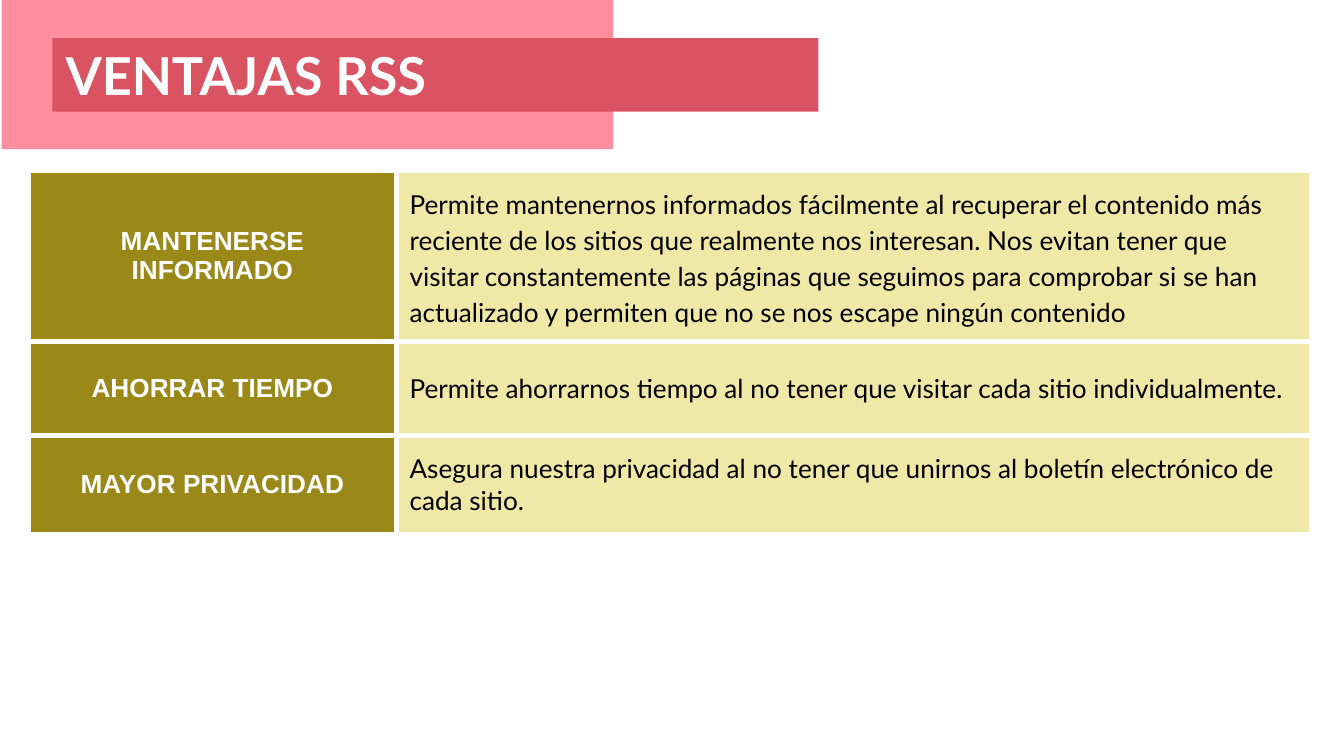
from lxml import etree
from pptx import Presentation
from pptx import util as u
from pptx.dml import color
from pptx.enum import shapes, text
from pptx.oxml import ns

WHITE = "FFFFFF"
MARGIN = u.Cm(0.25)


def write(tf, content, size=14, font="Lato", hue="000000", bold=False,
          align=text.PP_ALIGN.LEFT):
    tf.word_wrap = True
    p = tf.paragraphs[0]
    p.alignment = align
    r = p.add_run()
    r.text = content
    r.font.size = u.Pt(size)
    r.font.name = font
    r.font.bold = bold
    r.font.color.rgb = color.RGBColor.from_string(hue)
    return p


def paint(target, hue):
    target.fill.solid()
    target.fill.fore_color.rgb = color.RGBColor.from_string(hue)


prs = Presentation()
prs.slide_width, prs.slide_height = u.Cm(25.4), u.Cm(14.29)
s = prs.slides.add_slide(prs.slide_layouts[6])

# Title banner: the last band drawn carries the title
for box, hue in [((0.03, 0, 11.56, 2.82), "FF8E9E"),
                 ((0.99, 0.72, 14.48, 1.39), "D95362")]:
    sp = s.shapes.add_shape(shapes.MSO_SHAPE.RECTANGLE, *map(u.Cm, box))
    paint(sp, hue)
    sp.line.fill.background()
    sp.shadow.inherit = False

tf = sp.text_frame
tf.vertical_anchor = text.MSO_ANCHOR.MIDDLE
tf.margin_left = tf.margin_right = tf.margin_top = tf.margin_bottom = MARGIN
write(tf, "VENTAJAS RSS", size=28, hue=WHITE, bold=True)

# Table of advantages: name, explanation, row height in cm
advantages = [
    ("MANTENERSE INFORMADO",
     "Permite mantenernos informados fácilmente al recuperar el contenido más "
     "reciente de los sitios que realmente nos interesan. Nos evitan tener que "
     "visitar constantemente las páginas que seguimos para comprobar si se han "
     "actualizado y permiten que no se nos escape ningún contenido", 3.2),
    ("AHORRAR TIEMPO",
     "Permite ahorrarnos tiempo al no tener que visitar cada sitio "
     "individualmente.", 1.77),
    ("MAYOR PRIVACIDAD",
     "Asegura nuestra privacidad al no tener que unirnos al boletín "
     "electrónico de cada sitio.", 1.87),
]
widths = [6.95, 17.3]
table = s.shapes.add_table(
    len(advantages), len(widths), u.Cm(0.54), u.Cm(3.23), u.Cm(sum(widths)),
    u.Cm(sum(height for _, _, height in advantages))).table
table.first_row = table.horz_banding = False
for column, width in zip(table.columns, widths):
    column.width = u.Cm(width)

for row, (name, explanation, height) in zip(table.rows, advantages):
    row.height = u.Cm(height)
    name_cell, explanation_cell = row.cells
    write(name_cell.text_frame, name, font="Arial", hue=WHITE, bold=True,
          align=text.PP_ALIGN.CENTER)
    write(explanation_cell.text_frame, explanation)
    for cell, hue in [(name_cell, "9A8919"), (explanation_cell, "F0E8A7")]:
        cell.vertical_anchor = text.MSO_ANCHOR.MIDDLE
        cell.margin_left = cell.margin_right = MARGIN
        cell.margin_top = cell.margin_bottom = MARGIN
        paint(cell, hue)
        tcPr = cell._tc.get_or_add_tcPr()
        for i, side in enumerate(("lnL", "lnR", "lnT", "lnB")):
            ln = etree.Element(ns.qn(f"a:{side}"), w=str(u.Pt(3)))
            fill = etree.SubElement(ln, ns.qn("a:solidFill"))
            etree.SubElement(fill, ns.qn("a:srgbClr"), val=WHITE)
            tcPr.insert(i, ln)

p = table.cell(0, 1).text_frame.paragraphs[0]
p.line_spacing = 1.15
p.space_after = u.Pt(10)

prs.save("out.pptx")
